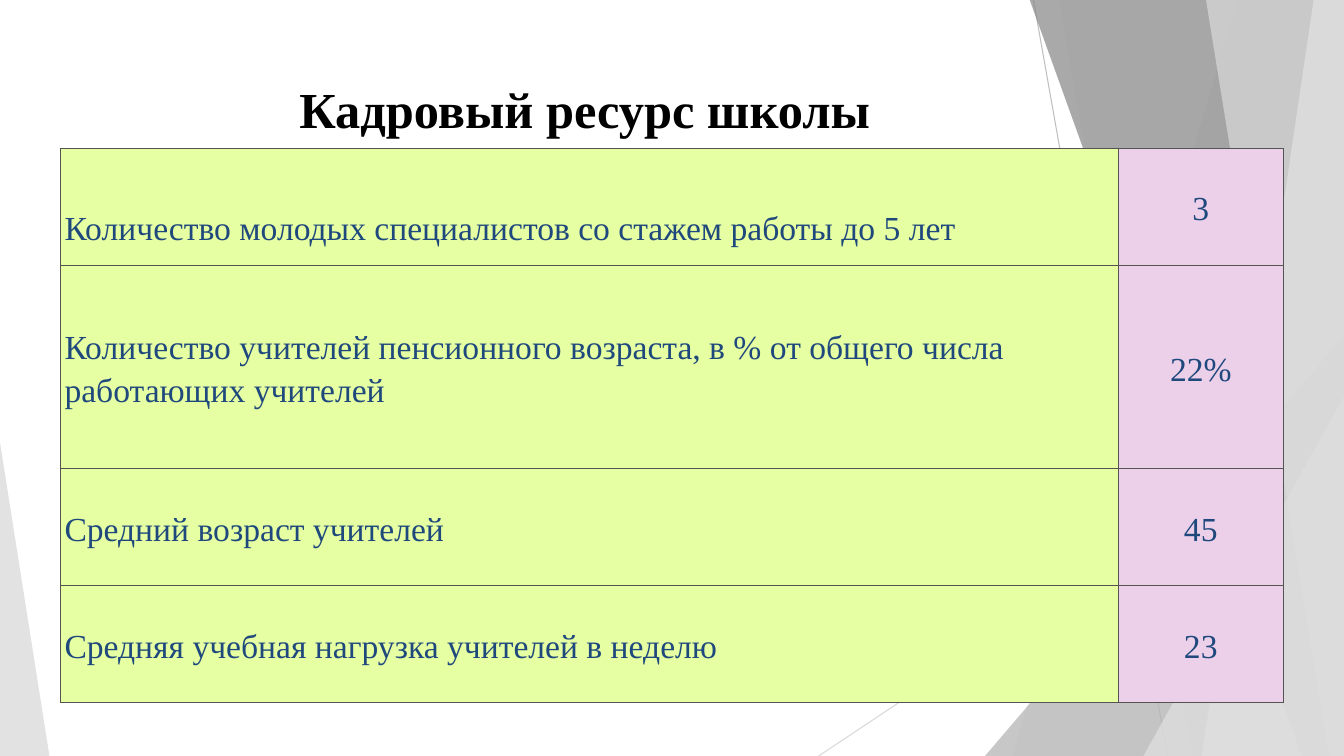
from lxml.etree import SubElement
from pptx import Presentation
from pptx.dml.color import RGBColor
from pptx.enum.shapes import MSO_CONNECTOR, MSO_SHAPE
from pptx.enum.text import MSO_ANCHOR, MSO_AUTO_SIZE, PP_ALIGN
from pptx.oxml.ns import qn
from pptx.util import Inches, Pt

SERIF = "Times New Roman"
TOP, RIGHT, BOTTOM = -0.01, 13.33, 7.5
RAYS = [
    ("BFBFBF", (10.25, 0), (11.58, BOTTOM)),
    ("D9D9D9", (RIGHT, 4.03), (8.12, BOTTOM)),
]
BACK_BANDS = [(12.28, 10.04, "DDDDDD", 30), (10.5, 11.83, "DDDDDD", 20)]
FRONT_BANDS = [
    (10.21, 12.91, "858585", 70),
    (13.03, 11.92, "EBEBEB", 70),
    (11.96, 13.18, "DDDDDD", 65),
]
BACK_TRIANGLE = (9.77, 3.33, 3.56, 4.17, 1, "B2B2B2", 72)
FRONT_TRIANGLES = [
    (11.34, 3.93, 1.99, 3.57, 1, "DDDDDD", 80),
    (0, 4.39, 0.49, 3.11, 0, "DDDDDD", 85),
]
STAFF = [
    ("Количество молодых специалистов со стажем работы до 5 лет", "3"),
    ("Количество учителей пенсионного возраста, в % от общего числа "
     "работающих учителей", "22%"),
    ("Средний возраст учителей", "45"),
    ("Средняя учебная нагрузка учителей в неделю", "23"),
]
COLUMN_WIDTHS = [10.49, 1.64]
ROW_HEIGHTS = [1.16, 2.02, 1.16, 1.16]
COLUMN_STYLES = [("E7FFA3", PP_ALIGN.LEFT), ("ECD0EA", PP_ALIGN.CENTER)]


def color(value):
    """Turn a hex string into a colour."""
    return RGBColor.from_string(value)


def set_all(target, values):
    """Set every named attribute on the target."""
    for name, value in values.items():
        setattr(target, name, value)


def write(para, text, size, shade, bold, align):
    """Write one formatted span into a paragraph."""
    para.alignment = align
    span = para.add_run()
    span.text = text
    set_all(span.font, {"name": SERIF, "size": Pt(size), "bold": bold})
    span.font.color.rgb = color(shade)


def paint(shape, shade, opacity):
    """Give a shape a see-through fill without outline or shadow."""
    shape.shadow.inherit = False
    shape.line.fill.background()
    shape.fill.solid()
    shape.fill.fore_color.rgb = color(shade)
    tint = shape.fill._xPr.find(qn("a:solidFill"))[0]
    SubElement(tint, qn("a:alpha"), val=str(opacity * 1000))


def add_ray(page, shade, start, end):
    """Draw a thin decorative line."""
    ends = [Inches(value) for value in (*start, *end)]
    ray = page.shapes.add_connector(MSO_CONNECTOR.STRAIGHT, *ends)
    ray.line.color.rgb = color(shade)
    ray.line.width = Pt(0.75)
    SubElement(ray._element.spPr, qn("a:effectLst"))


def add_band(page, top_x, bottom_x, shade, opacity):
    """Draw a slanted band that reaches the right edge."""
    corners = [(RIGHT, TOP), (RIGHT, BOTTOM), (bottom_x, BOTTOM)]
    outline = page.shapes.build_freeform(Inches(top_x), Inches(TOP))
    outline.add_line_segments([(Inches(x), Inches(y)) for x, y in corners])
    paint(outline.convert_to_shape(), shade, opacity)


def add_triangle(page, left, top, width, height, apex, shade, opacity):
    """Draw a decorative triangle."""
    place = [Inches(value) for value in (left, top, width, height)]
    triangle = page.shapes.add_shape(MSO_SHAPE.ISOSCELES_TRIANGLE, *place)
    triangle.adjustments[0] = apex
    paint(triangle, shade, opacity)


def add_backdrop(page):
    """Draw the grey facets from back to front."""
    for ray in RAYS:
        add_ray(page, *ray)
    for band in BACK_BANDS:
        add_band(page, *band)
    add_triangle(page, *BACK_TRIANGLE)
    for band in FRONT_BANDS:
        add_band(page, *band)
    for triangle in FRONT_TRIANGLES:
        add_triangle(page, *triangle)


def add_title(page, text):
    """Place the title above the backdrop."""
    title = page.shapes.title
    page.shapes._spTree.append(title._element)
    set_all(title, {"left": Inches(0.74), "top": Inches(0.67),
                    "width": Inches(9.4), "height": Inches(1.44)})
    frame = title.text_frame
    set_all(frame, {"auto_size": MSO_AUTO_SIZE.NONE, "word_wrap": True,
                    "vertical_anchor": MSO_ANCHOR.TOP,
                    "margin_left": Inches(0.82), "margin_top": Inches(0.1)})
    write(frame.paragraphs[0], text, 36, "000000", True, PP_ALIGN.CENTER)


def add_borders(cell):
    """Outline a table cell."""
    properties = cell._tc.get_or_add_tcPr()
    for side in ("lnL", "lnR", "lnT", "lnB"):
        line = SubElement(properties, qn(f"a:{side}"), w=str(Pt(1)))
        fill = SubElement(line, qn("a:solidFill"))
        SubElement(fill, qn("a:srgbClr"), val="565452")


def fill_cell(cell, text, shade, align):
    """Format a table cell and write its text."""
    add_borders(cell)
    cell.fill.solid()
    cell.fill.fore_color.rgb = color(shade)
    cell.vertical_anchor = MSO_ANCHOR.MIDDLE
    for side in ("left", "right", "top", "bottom"):
        setattr(cell, f"margin_{side}", Inches(0.04))
    para = cell.text_frame.paragraphs[0]
    para.line_spacing = 1.15
    write(para, text, 24, "1F497D", False, align)


def add_staff_table(page):
    """Build the table of staff figures."""
    frame = page.shapes.add_table(
        len(STAFF), len(COLUMN_WIDTHS), Inches(0.6), Inches(1.47),
        Inches(sum(COLUMN_WIDTHS)), Inches(sum(ROW_HEIGHTS)))
    table = frame.table
    set_all(table, {"first_row": False, "horz_banding": False})
    for column, width in zip(table.columns, COLUMN_WIDTHS):
        column.width = Inches(width)
    for row, height, texts in zip(table.rows, ROW_HEIGHTS, STAFF):
        row.height = Inches(height)
        for cell, text, style in zip(row.cells, texts, COLUMN_STYLES):
            fill_cell(cell, text, *style)
    table.cell(0, 0).margin_top = Inches(0.44)


def main():
    """Build the slide and save it."""
    deck = Presentation()
    set_all(deck, {"slide_width": Inches(RIGHT),
                   "slide_height": Inches(BOTTOM)})
    page = deck.slides.add_slide(deck.slide_layouts[5])
    add_backdrop(page)
    add_title(page, "Кадровый ресурс школы")
    add_staff_table(page)
    deck.save("out.pptx")


if __name__ == "__main__":
    main()
